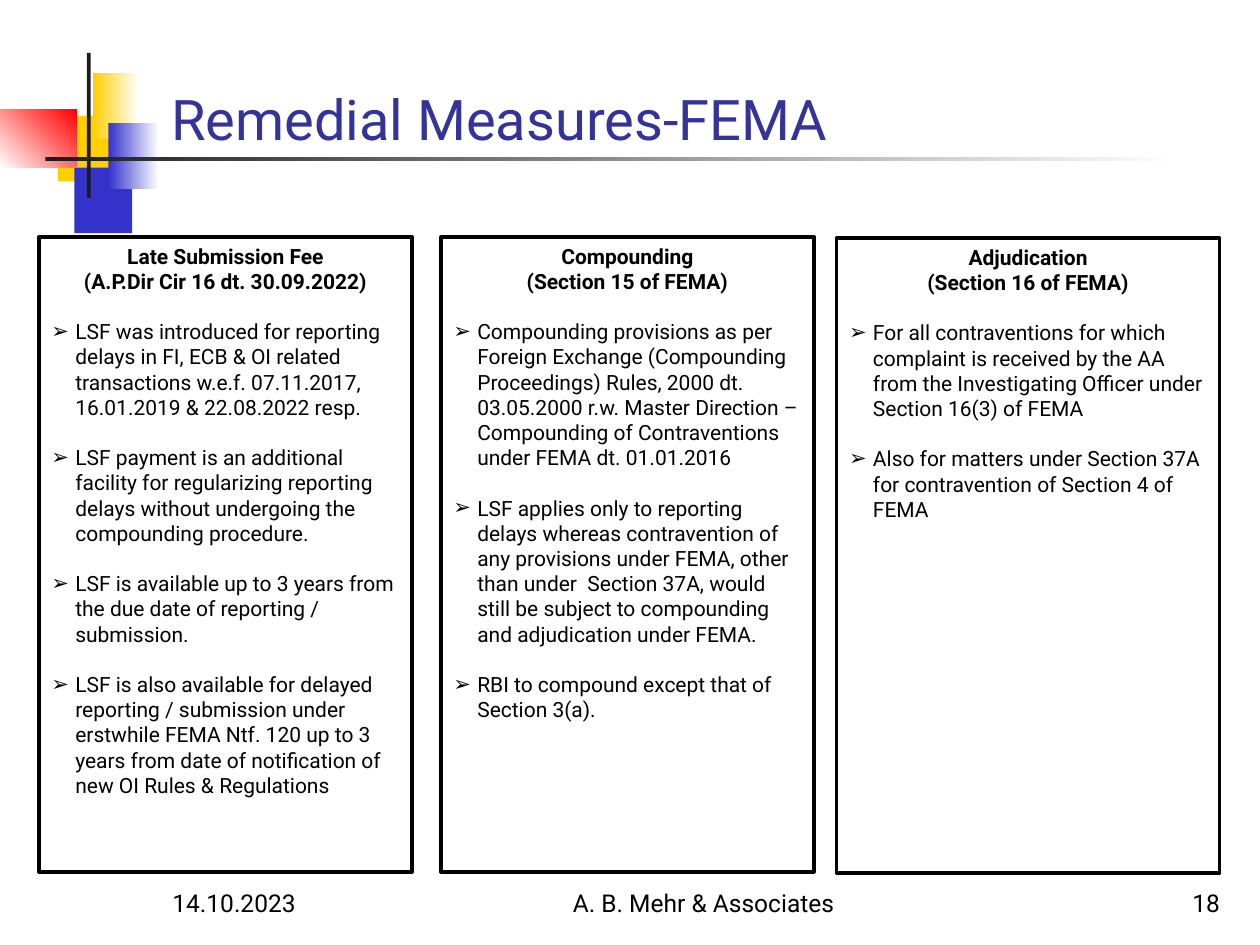
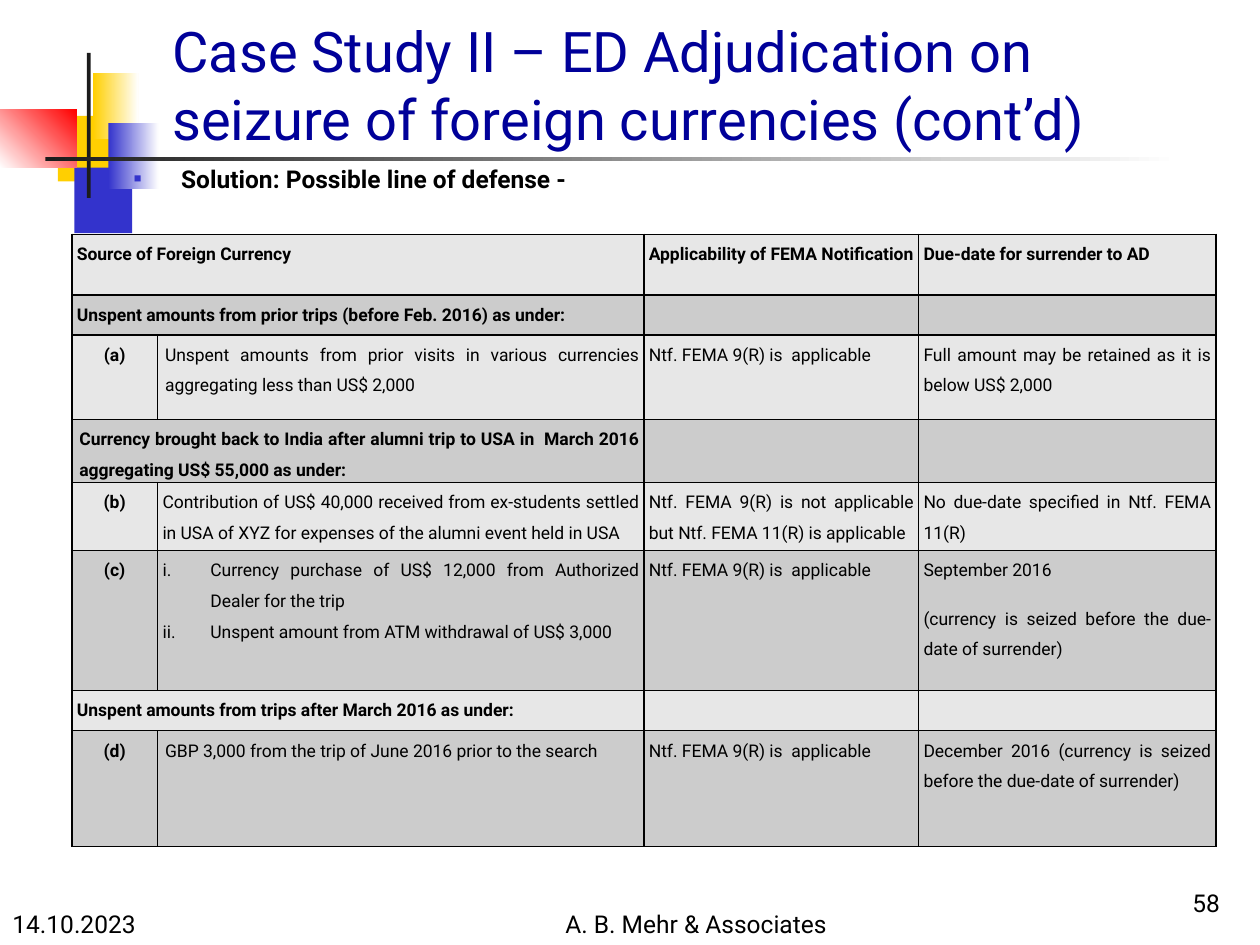
from lxml import etree
from pptx import Presentation
from pptx.dml.color import RGBColor
from pptx.enum import shapes, text
from pptx.oxml import ns
from pptx.util import Inches, Pt

FONT = "Roboto"
BLACK = RGBColor(0, 0, 0)
WHITE = RGBColor(255, 255, 255)
INK = RGBColor(0x1C, 0x1C, 0x1C)
GOLD = RGBColor(0xFF, 0xCF, 0x01)
BLUE = RGBColor(0x33, 0x33, 0xCC)
RED = RGBColor(0xFF, 0, 0)
INDIGO = RGBColor(0x33, 0x33, 0x99)
NAVY = RGBColor(0, 0, 0x99)
LIGHT = RGBColor(0xE7, 0xE7, 0xE7)
GRAY = RGBColor(0xCC, 0xCC, 0xCC)

LEFT, MID = text.PP_ALIGN.LEFT, text.PP_ALIGN.CENTER
RIGHT, JUST = text.PP_ALIGN.RIGHT, text.PP_ALIGN.JUSTIFY
TOP, LOW = text.MSO_ANCHOR.TOP, text.MSO_ANCHOR.BOTTOM

DATE = "14.10.2023"
FIRM = "A. B. Mehr & Associates"

# Corner motif: place, colour, end colour of the fade, angle
MOTIF = [
    ((0.46, 0.92, 0.48, 0.52), GOLD, None, 0),
    ((0.59, 1.33, 0.46, 0.52), BLUE, None, 0),
    ((0.74, 0.58, 0.36, 0.52), GOLD, WHITE, 0),
    ((0.86, 0.98, 0.40, 0.52), BLUE, WHITE, 0),
    ((0, 0.87, 0.61, 0.46), WHITE, RED, 45),
    ((0.69, 0.42, 0.03, 1.15), INK, None, 0),
    ((0.36, 1.25, 9, 0.03), INK, WHITE, 0),
]

# Remedies: place, heading lines, points
PANELS = [
    ((0.31, 1.88, 2.96, 5.04),
     ["Late Submission Fee", "(A.P.Dir Cir 16 dt. 30.09.2022)"],
     ["LSF was introduced for reporting delays in FI, ECB & OI related "
      "transactions w.e.f. 07.11.2017, 16.01.2019 & 22.08.2022 resp.",
      "LSF payment is an additional facility for regularizing reporting "
      "delays without undergoing the compounding procedure.",
      "LSF is available up to 3 years from the due date of reporting / "
      "submission.",
      "LSF is also available for delayed reporting / submission under "
      "erstwhile FEMA Ntf. 120 up to 3 years from date of notification of "
      "new OI Rules & Regulations"]),
    ((3.5, 1.88, 2.96, 5.04),
     ["Compounding", "(Section 15 of FEMA)"],
     ["Compounding provisions as per Foreign Exchange (Compounding "
      "Proceedings) Rules, 2000 dt. 03.05.2000 r.w. Master Direction – "
      "Compounding of Contraventions under FEMA dt. 01.01.2016",
      "LSF applies only to reporting delays whereas contravention of any "
      "provisions under FEMA, other than under  Section 37A, would still be "
      "subject to compounding and adjudication under FEMA.",
      "RBI to compound except that of Section 3(a)."]),
    ((6.64, 1.89, 3.04, 5.04),
     ["Adjudication", "(Section 16 of FEMA)"],
     ["For all contraventions for which complaint is received by the AA from "
      "the Investigating Officer under Section 16(3) of FEMA",
      "Also for matters under Section 37A for contravention of Section 4 of "
      "FEMA"]),
]

# Defence table: height, indent, label, source, rule, due date;
# a row without a label spans the first two columns
APPLIES = "Ntf. FEMA 9(R) is  applicable"
ROWS = [
    (0.48, 0, "", "Source of Foreign Currency",
     "Applicability of FEMA Notification", "Due-date for surrender to AD"),
    (0.32, 0, "",
     "Unspent amounts from prior trips (before Feb. 2016) as under:", "", ""),
    (0.67, 0.02, "(a)",
     "Unspent amounts from prior visits in various currencies aggregating "
     "less than US$ 2,000", APPLIES,
     "Full amount may be retained as it is below US$ 2,000"),
    (0.49, 0.02, "",
     "Currency brought back to India after alumni trip to USA in  March 2016 "
     "aggregating US$ 55,000 as under:", "", ""),
    (0.54, 0, "(b)",
     "Contribution of US$ 40,000 received from ex-students settled in USA of "
     "XYZ for expenses of the alumni event held in USA",
     "Ntf. FEMA 9(R) is not applicable but Ntf. FEMA 11(R) is applicable",
     "No due-date specified in Ntf. FEMA 11(R)"),
    (1.11, 0, "(c)",
     ["Currency purchase of US$ 12,000 from Authorized Dealer for the trip",
      "Unspent amount from ATM withdrawal of US$ 3,000"], APPLIES,
     ["September 2016",
      "(currency is seized before the due-date of surrender)"]),
    (0.32, 0, "",
     "Unspent amounts from trips after March 2016 as under:", "", ""),
    (0.92, 0.02, "(d)",
     "GBP 3,000 from the trip of June 2016 prior to the search", APPLIES,
     "December 2016 (currency is seized before the due-date of surrender)"),
]
COLS = [0.68, 3.86, 2.18, 2.36]


def place(box):
    return [Inches(n) for n in box]


def sub(node, tag, **attrs):
    return etree.SubElement(node, ns.qn(tag), attrs)


def indent(para, left, first=0):
    props = para._p.get_or_add_pPr()
    props.set("marL", str(Inches(left)))
    props.set("indent", str(Inches(first)))
    return props


def bullet(para, left, mark, color=None):
    """Hang a bullet; call this before the font is set."""
    props = indent(para, left, -left)
    if color is not None:
        sub(sub(props, "a:buClr"), "a:srgbClr", val=str(color))
    sub(props, "a:buFont", typeface="Arial")
    sub(props, "a:buChar", char=mark)


def number(para, left):
    sub(indent(para, left, -left), "a:buAutoNum", type="romanLcPeriod")


def style(para, size, color=BLACK, bold=False, align=LEFT):
    font = para.font
    font.name, font.size, font.bold = FONT, Pt(size), bold
    font.color.rgb = color
    para.alignment = align


def fill_lines(frame, lines):
    """Write one paragraph per line and return the paragraphs."""
    for i, line in enumerate(lines):
        para = frame.paragraphs[0] if i == 0 else frame.add_paragraph()
        if line:
            para.add_run().text = line
    return frame.paragraphs


def label(slide, box, words, size=14, color=BLACK, bold=False, align=LEFT,
          anchor=LOW):
    frame = slide.shapes.add_textbox(*place(box)).text_frame
    frame.word_wrap, frame.vertical_anchor = True, anchor
    para = fill_lines(frame, [words])[0]
    return para, lambda: style(para, size, color, bold, align)


def write(*args, **opts):
    label(*args, **opts)[1]()


def block(slide, box, color, fade=None, angle=0):
    shape = slide.shapes.add_shape(shapes.MSO_SHAPE.RECTANGLE, *place(box))
    shape.shadow.inherit = False
    shape.line.fill.background()
    if fade is None:
        shape.fill.solid()
        shape.fill.fore_color.rgb = color
    else:
        shape.fill.gradient()
        shape.fill.gradient_angle = angle
        for stop, tint in zip(shape.fill.gradient_stops, (color, fade)):
            stop.color.rgb = tint
    return shape


def start(deck, title, box, color):
    slide = deck.slides.add_slide(deck.slide_layouts[6])
    for part in MOTIF:
        block(slide, *part)
    write(slide, box, title, size=32, color=color)
    return slide


def footer(slide, date, firm, page):
    write(slide, (*date, 2.08, 0.5), DATE)
    write(slide, (*firm, 3.17, 0.5), FIRM, align=MID)
    write(slide, (7.7, 6.83, 2.08, 0.5), page, align=RIGHT)


def panel(slide, box, heads, points):
    shape = block(slide, box, WHITE)
    shape.line.color.rgb, shape.line.width = BLACK, Pt(2)
    frame = shape.text_frame
    frame.word_wrap, frame.vertical_anchor = True, TOP
    for i, para in enumerate(fill_lines(frame, heads + points)):
        if i < len(heads):
            style(para, 12, bold=True, align=MID)
        else:
            bullet(para, 0.19, "➢")
            para.space_before = Pt(14.4)
            style(para, 12)


def edge(cell):
    props = cell._tc.get_or_add_tcPr()
    for i, side in enumerate("LRTB"):
        line = etree.Element(ns.qn("a:ln" + side), w=str(Pt(1)))
        sub(sub(line, "a:solidFill"), "a:srgbClr", val=str(BLACK))
        props.insert(i, line)


def fill_cell(cell, words, tint, bold, align, pad):
    cell.margin_left = cell.margin_right = Inches(0.04)
    cell.margin_top = cell.margin_bottom = 0
    cell.fill.solid()
    cell.fill.fore_color.rgb = tint
    edge(cell)
    lines = words if isinstance(words, list) else [words]
    for para in fill_lines(cell.text_frame, lines):
        indent(para, pad)
        para.line_spacing, para.space_after = 1.5, Pt(10)
        style(para, 10, bold=bold, align=align)


def grid(slide):
    box = (0.57, 1.86, sum(COLS), sum(row[0] for row in ROWS))
    table = slide.shapes.add_table(len(ROWS), len(COLS), *place(box)).table
    table.first_row = table.horz_banding = False
    for col, width in zip(table.columns, COLS):
        col.width = Inches(width)
    for r, (height, pad, mark, source, rule, due) in enumerate(ROWS):
        table.rows[r].height = Inches(height)
        tint = GRAY if r % 2 else LIGHT
        words = [mark, source, rule, due] if mark else [source, "", rule, due]
        for c, item in enumerate(words):
            align = MID if mark and c == 0 else JUST if r else LEFT
            bold = c == 0 or r == 0
            fill_cell(table.cell(r, c), item, tint, bold, align,
                      pad if item == source else 0)
        if not mark:
            table.cell(r, 0).merge(table.cell(r, 1))
        if isinstance(source, list):
            for para in table.cell(r, 1).text_frame.paragraphs:
                # Rebuild the properties so the numbering precedes the font
                para._p.remove(para._p.pPr)
                number(para, 0.38)
                para.line_spacing = 1.5
                style(para, 10, align=JUST)


def remedies(deck):
    slide = start(deck, "Remedial Measures-FEMA", (1.26, 0.23, 8.52, 1.02),
                  INDIGO)
    footer(slide, (1.27, 6.83), (4, 6.83), "18")
    for part in PANELS:
        panel(slide, *part)


def defence(deck):
    slide = start(deck, "Case Study II – ED Adjudication on seizure of "
                  "foreign currencies (cont’d)", (1.27, 0, 8.5, 1.25), NAVY)
    para, finish = label(slide, (0.96, 1.25, 8.34, 5.99),
                         "Solution: Possible line of defense -", bold=True,
                         align=JUST, anchor=TOP)
    bullet(para, 0.38, "▪", BLUE)
    para.space_before = para.space_after = Pt(6)
    finish()
    footer(slide, (0, 7), (3.94, 7), "58")
    grid(slide)


def main():
    deck = Presentation()
    deck.slide_width, deck.slide_height = Inches(10), Inches(7.5)
    remedies(deck)
    defence(deck)
    deck.save("out.pptx")


if __name__ == "__main__":
    main()
